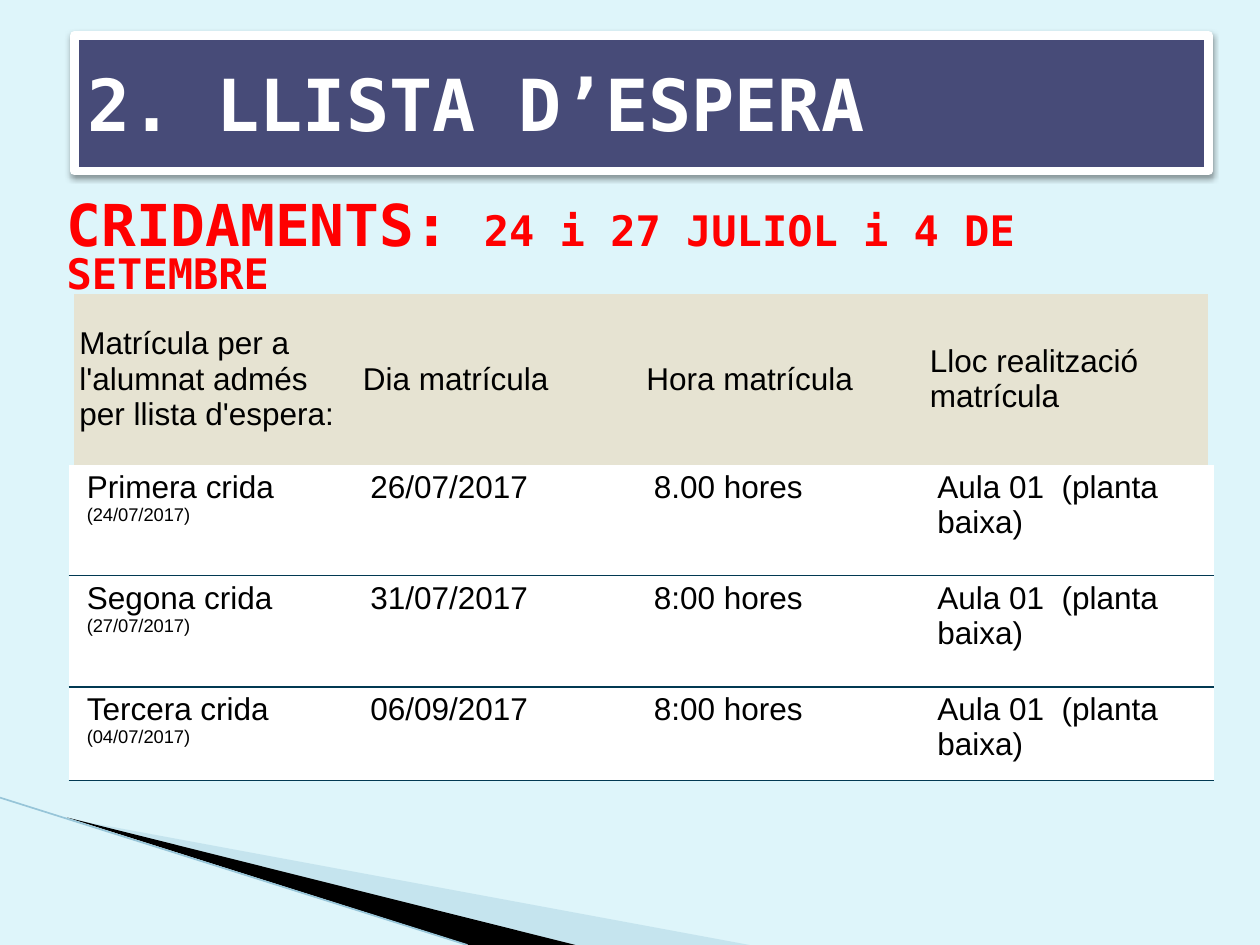
from dataclasses import dataclass

from lxml.etree import SubElement
from pptx import Presentation
from pptx.dml.color import RGBColor
from pptx.enum.shapes import MSO_CONNECTOR as Connector
from pptx.enum.text import MSO_ANCHOR as Anchor, MSO_AUTO_SIZE as AutoSize, PP_ALIGN as Align
from pptx.oxml.ns import qn
from pptx.util import Cm, Pt

MONO, SANS = "DejaVu Sans Mono", "Arial"
WHITE, NAVY, BLACK, RED = "FFFFFF", "474B78", "000000", "FF0000"
NO_TABLE_STYLE = "{2D5ABB26-0587-4C30-8999-92F81FD0307C}"


@dataclass
class Wedge:
    points: list[tuple[float, float]]
    color: str
    opacity: int = 100


@dataclass
class Call:
    name: str
    called: str
    day: str
    hour: str
    place: str = "Aula 01  (planta baixa)"


WEDGES = [
    Wedge([(1.4, 16.51), (15.11, 19.05), (11.58, 19.05)], "A0CBDC", 40),
    Wedge([(1.35, 16.48), (11.6, 19.05), (9.45, 19.05)], BLACK),
]
HEADINGS = ["Matrícula per a l'alumnat admés per llista d'espera:", "Dia matrícula",
            "Hora matrícula", "Lloc realització matrícula"]
CALLS = [
    Call("Primera crida", "(24/07/2017)", "26/07/2017", "8.00 hores"),
    Call("Segona crida", "(27/07/2017)", "31/07/2017", "8:00 hores"),
    Call("Tercera crida", "(04/07/2017)", "06/09/2017", "8:00 hores"),
]
ROW_HEIGHTS = [3.45, 2.24, 2.24, 1.88]
TABLE_WIDTH = 22.86


def rgb(color: str) -> RGBColor:
    return RGBColor.from_string(color)


def set_all(target, values: dict) -> None:
    for name, value in values.items():
        setattr(target, name, value)


def place(shape, left: float, top: float, width: float, height: float) -> None:
    set_all(shape, {"left": Cm(left), "top": Cm(top), "width": Cm(width), "height": Cm(height)})


def add_span(para, text: str, size: float, color: str, font: str, bold: bool = False) -> None:
    span = para.add_run()
    span.text = text
    set_all(span.font, {"name": font, "size": Pt(size), "bold": bold})
    span.font.color.rgb = rgb(color)


def add_wedge(page, wedge: Wedge) -> None:
    start, *others = [(Cm(x), Cm(y)) for x, y in wedge.points]
    builder = page.shapes.build_freeform(*start)
    builder.add_line_segments(others, close=True)
    shape = builder.convert_to_shape()
    shape.shadow.inherit = False
    shape.line.fill.background()
    shape.fill.solid()
    shape.fill.fore_color.rgb = rgb(wedge.color)
    if wedge.opacity < 100:
        color = next(shape.element.spPr.iter(qn("a:srgbClr")))
        SubElement(color, qn("a:alpha"), val=str(wedge.opacity * 1000))


def add_edge(page) -> None:
    edge = page.shapes.add_connector(Connector.STRAIGHT, Cm(0), Cm(16.08), Cm(9.42), Cm(19.05))
    edge.line.color.rgb = rgb("97C5D8")
    edge.line.width = Pt(0.95)
    SubElement(edge.element.spPr, qn("a:effectLst"))


def add_shadow(shape) -> None:
    effects = SubElement(shape.element.spPr, qn("a:effectLst"))
    shadow = SubElement(effects, qn("a:outerShdw"), blurRad=str(Pt(3.1)), dist=str(Pt(1.6)),
                        dir="5400000", rotWithShape="0")
    color = SubElement(shadow, qn("a:srgbClr"), val=BLACK)
    SubElement(color, qn("a:alpha"), val="38000")


def fill_title(title) -> None:
    place(title, 1.5, 0.71, TABLE_WIDTH, 2.74)
    title.fill.solid()
    title.fill.fore_color.rgb = rgb(NAVY)
    title.line.color.rgb = rgb(WHITE)
    title.line.width = Pt(5)
    add_shadow(title)
    set_all(title.text_frame, {"auto_size": AutoSize.NONE, "word_wrap": True,
                               "vertical_anchor": Anchor.MIDDLE})
    para = title.text_frame.paragraphs[0]
    para.alignment = Align.LEFT
    add_span(para, "2. LLISTA D’ESPERA", 41, WHITE, MONO, True)


def fill_body(body) -> None:
    place(body, 1.09, 3.94, 23.39, 14.4)
    set_all(body.text_frame, {"auto_size": AutoSize.NONE, "word_wrap": True})
    para = body.text_frame.paragraphs[0]
    set_all(para, {"line_spacing": 0.8, "space_before": Pt(0)})
    properties = para._p.get_or_add_pPr()
    set_all_xml = {"marL": "0", "indent": "0"}
    for name, value in set_all_xml.items():
        properties.set(name, value)
    SubElement(properties, qn("a:buNone"))
    add_span(para, "CRIDAMENTS: ", 33, RED, MONO, True)
    add_span(para, "24 i 27 JULIOL i 4 DE SETEMBRE", 24, RED, MONO, True)


def add_border(cell, side: str, color: str, width: float) -> None:
    line = SubElement(cell._tc.get_or_add_tcPr(), qn(f"a:{side}"), w=str(Pt(width)))
    SubElement(SubElement(line, qn("a:solidFill")), qn("a:srgbClr"), val=color)


def fill_cell(cell, lines: list[tuple[str, float]], is_heading: bool) -> None:
    edge = Cm(0.08 if is_heading else 0.1)
    set_all(cell, {
        "margin_left": Cm(0.1 if is_heading else 0.25), "margin_right": Cm(0.25),
        "margin_top": edge, "margin_bottom": edge,
        "vertical_anchor": Anchor.MIDDLE if is_heading else Anchor.TOP,
    })
    if not is_heading:
        add_border(cell, "lnL", WHITE, 7.5)
        add_border(cell, "lnR", WHITE, 7.5)
        add_border(cell, "lnB", "013952", 0.75)
    cell.fill.solid()
    cell.fill.fore_color.rgb = rgb("E6E3D2" if is_heading else WHITE)
    frame = cell.text_frame
    for index, (text, size) in enumerate(lines):
        para = frame.add_paragraph() if index else frame.paragraphs[0]
        add_span(para, text, size, BLACK, SANS)


def add_calls_table(page) -> None:
    frame = page.shapes.add_table(len(CALLS) + 1, len(HEADINGS), Cm(1.5), Cm(5.92),
                                  Cm(TABLE_WIDTH), Cm(sum(ROW_HEIGHTS)))
    table = frame.table
    set_all(table, {"first_row": False, "horz_banding": False})
    next(frame.element.iter(qn("a:tableStyleId"))).text = NO_TABLE_STYLE
    for column in table.columns:
        column.width = Cm(TABLE_WIDTH / len(HEADINGS))
    for row, height in zip(table.rows, ROW_HEIGHTS):
        row.height = Cm(height)
    rows = [[[(heading, 18)] for heading in HEADINGS]]
    for call in CALLS:
        rows.append([[(call.name, 18), (call.called, 10.5)],
                     *([(text, 18)] for text in (call.day, call.hour, call.place))])
    for row_index, row in enumerate(rows):
        for column_index, lines in enumerate(row):
            fill_cell(table.cell(row_index, column_index), lines, row_index == 0)


def main() -> None:
    deck = Presentation()
    set_all(deck, {"slide_width": Cm(25.4), "slide_height": Cm(19.05)})
    page = deck.slides.add_slide(deck.slide_layouts[1])
    page.background.fill.solid()
    page.background.fill.fore_color.rgb = rgb("DEF5FA")
    fill_title(page.shapes.title)
    fill_body(page.placeholders[1])
    for wedge in WEDGES:
        add_wedge(page, wedge)
    add_edge(page)
    add_calls_table(page)
    deck.save("out.pptx")


if __name__ == "__main__":
    main()
